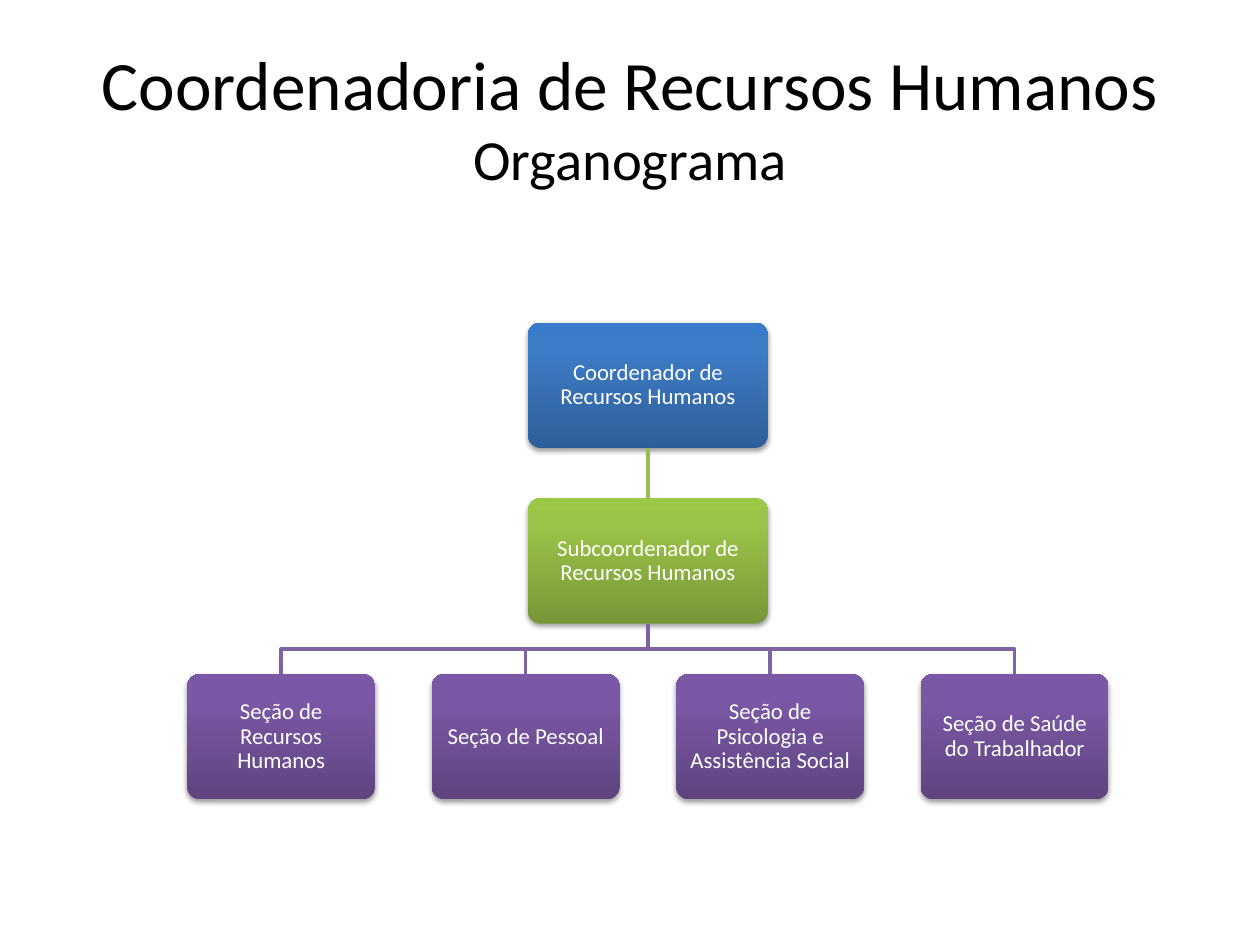
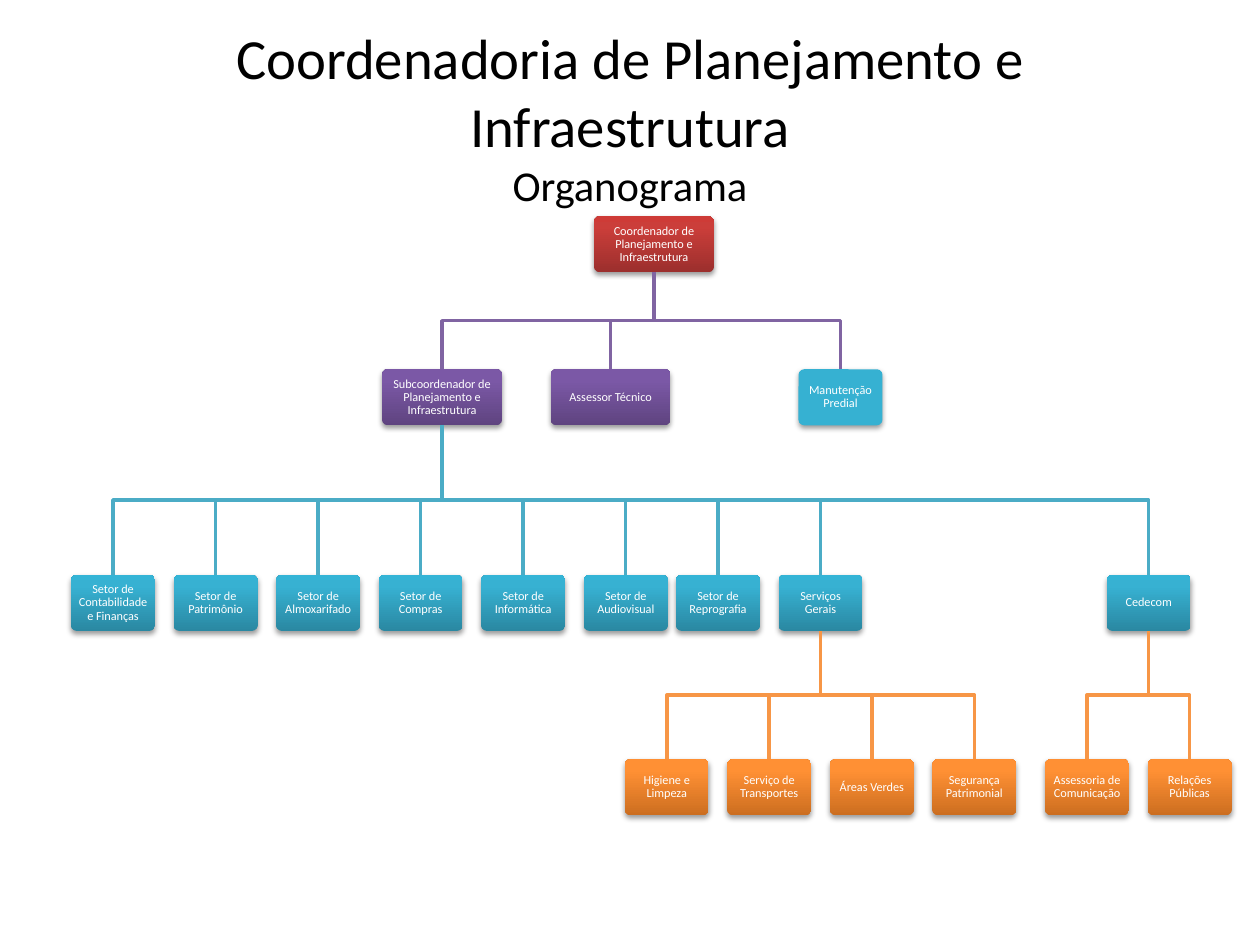
from copy import deepcopy

from lxml import etree
from pptx import Presentation
from pptx.dml.color import RGBColor
from pptx.enum.shapes import MSO_CONNECTOR, MSO_SHAPE
from pptx.enum.text import MSO_ANCHOR, MSO_AUTO_SIZE, PP_ALIGN
from pptx.oxml.ns import qn
from pptx.util import Pt

STRAIGHT = MSO_CONNECTOR.STRAIGHT
ROUNDED = MSO_SHAPE.ROUNDED_RECTANGLE
MIDDLE = MSO_ANCHOR.MIDDLE
NO_AUTOFIT = MSO_AUTO_SIZE.NONE
CENTER = PP_ALIGN.CENTER

FONT = "Calibri"
TITLE_ONLY = 5
BLACK = RGBColor(0x00, 0x00, 0x00)
WHITE = RGBColor(0xFF, 0xFF, 0xFF)
FLAT_AQUA = RGBColor(0x36, 0xB1, 0xD2)

# Box gradients, from the bottom edge (dark) to the top edge (light)
STOP_POSITIONS = (0, 0.8, 1)
BLUE = (RGBColor(0x2F, 0x5F, 0x99), RGBColor(0x3D, 0x7C, 0xC7), RGBColor(0x3A, 0x7C, 0xCB))
GREEN = (RGBColor(0x77, 0x97, 0x37), RGBColor(0x9B, 0xC3, 0x48), RGBColor(0x9D, 0xC7, 0x46))
PURPLE = (RGBColor(0x5F, 0x44, 0x80), RGBColor(0x7B, 0x58, 0xA6), RGBColor(0x7C, 0x57, 0xA8))
RED = (RGBColor(0x9C, 0x2F, 0x2D), RGBColor(0xCB, 0x3E, 0x3A), RGBColor(0xCE, 0x3B, 0x37))
AQUA = (RGBColor(0x2A, 0x88, 0xA2), RGBColor(0x37, 0xB1, 0xD2), RGBColor(0x34, 0xB4, 0xD6))
ORANGE = (RGBColor(0xCC, 0x6E, 0x20), RGBColor(0xFF, 0x90, 0x34), RGBColor(0xFF, 0x91, 0x36))

GREEN_LINE = RGBColor(0x9B, 0xBB, 0x59)
PURPLE_LINE = RGBColor(0x80, 0x64, 0xA2)
AQUA_LINE = RGBColor(0x4B, 0xAC, 0xC6)
ORANGE_LINE = RGBColor(0xF7, 0x96, 0x46)


def write(paragraph, text, size=13, color=WHITE):
    """Add a formatted run to a centred paragraph."""
    paragraph.alignment = CENTER
    run = paragraph.add_run()
    run.text = text
    run.font.name = FONT
    run.font.size = Pt(size)
    run.font.color.rgb = color
    return run


def spread(middle, count, step):
    """Return equally spaced centres around a middle."""
    return [middle + (i - (count - 1) / 2) * step for i in range(count)]


class OrgChart:
    """Holds the box style and the slide being drawn."""

    def __init__(self, prs, box_height, text_size, inset):
        self.slide = prs.slides.add_slide(prs.slide_layouts[TITLE_ONLY])
        self.box_height = box_height
        self.text_size = text_size
        self.inset = Pt(inset)

    def title(self, heading, heading_size, subtitle, subtitle_size):
        holder = self.slide.shapes.title
        holder.left, holder.top, holder.width, holder.height = Pt(36), Pt(21.6), Pt(648), Pt(90)
        frame = holder.text_frame
        frame.auto_size = NO_AUTOFIT
        frame.vertical_anchor = MIDDLE
        paragraph = frame.paragraphs[0]
        run = write(paragraph, heading, size=heading_size, color=BLACK)
        # The break takes the heading's size so it does not stretch the line
        paragraph.add_line_break()
        paragraph._p[-1].append(deepcopy(run._r.rPr))
        write(paragraph, subtitle, size=subtitle_size, color=BLACK)

    def box(self, text, center, top, width, colors):
        box = self.slide.shapes.add_shape(
            ROUNDED, Pt(center - width / 2), Pt(top), Pt(width), Pt(self.box_height))
        box.adjustments[0] = 0.1
        self.paint(box, colors)
        box.line.fill.background()
        self.cast_shadow(box)
        frame = box.text_frame
        frame.word_wrap = True
        frame.vertical_anchor = MIDDLE
        frame.margin_left = frame.margin_right = self.inset
        frame.margin_top = frame.margin_bottom = self.inset
        frame.paragraphs[0].line_spacing = 0.9
        write(frame.paragraphs[0], text, size=self.text_size)
        return box

    def paint(self, box, colors):
        if isinstance(colors, RGBColor):
            box.fill.solid()
            box.fill.fore_color.rgb = colors
            return
        box.fill.gradient()
        box.fill.gradient_angle = 90
        stops = box._element.spPr.find(".//" + qn("a:gsLst"))
        stops.append(deepcopy(stops[0]))
        for stop, position, color in zip(box.fill.gradient_stops, STOP_POSITIONS, colors):
            stop.position = position
            stop.color.rgb = color

    def cast_shadow(self, box):
        box.shadow.inherit = False
        effects = box._element.spPr.find(qn("a:effectLst"))
        shadow = etree.SubElement(
            effects, qn("a:outerShdw"), blurRad=str(Pt(3.1)), dist=str(Pt(1.6)),
            dir="5400000", rotWithShape="0")
        tone = etree.SubElement(shadow, qn("a:srgbClr"), val=str(BLACK))
        etree.SubElement(tone, qn("a:alpha"), val="38000")

    def link(self, parent, child, color):
        """Join two boxes, bending halfway down when they are not aligned."""
        start_x, end_x = (b.left + b.width // 2 for b in (parent, child))
        start_y, end_y = parent.top + parent.height, child.top
        if abs(start_x - end_x) < Pt(0.1):
            line = self.slide.shapes.add_connector(STRAIGHT, start_x, start_y, end_x, end_y)
            etree.SubElement(line._element.spPr, qn("a:effectLst"))
        else:
            bend = (start_y + end_y) // 2
            outline = self.slide.shapes.build_freeform(start_x, start_y)
            outline.add_line_segments(
                [(start_x, bend), (end_x, bend), (end_x, end_y)], close=False)
            line = outline.convert_to_shape()
            line.fill.background()
            line.shadow.inherit = False
        line.line.color.rgb = color
        line.line.width = Pt(2)

    def row(self, parent, labels, centers, top, width, colors, line_color):
        """Draw the boxes below a parent and return them."""
        boxes = []
        for label, center in zip(labels, centers):
            boxes.append(self.box(label, center, top, width, colors))
            self.link(parent, boxes[-1], line_color)
        return boxes


def human_resources(prs):
    chart = OrgChart(prs, box_height=71.6, text_size=13, inset=3.6)
    chart.title("Coordenadoria de Recursos Humanos", 39.6, "Organograma", 32.4)
    axis, wide = 370.2, 137
    tops = [184.4 + level * 100.4 for level in range(3)]

    coordinator = chart.box("Coordenador de Recursos Humanos", axis, tops[0], wide, BLUE)
    [deputy] = chart.row(coordinator, ["Subcoordenador de Recursos Humanos"], [axis],
                         tops[1], wide, GREEN, GREEN_LINE)
    sections = ["Seção de Recursos Humanos", "Seção de Pessoal",
                "Seção de Psicologia e Assistência Social", "Seção de Saúde do Trabalhador"]
    chart.row(deputy, sections, spread(axis, len(sections), 139.7),
              tops[2], 107.4, PURPLE, PURPLE_LINE)


def planning(prs):
    chart = OrgChart(prs, box_height=32, text_size=7, inset=2)
    chart.title("Coordenadoria de Planejamento e Infraestrutura", 32.4, "Organograma", 24.3)
    wide, narrow, step = 68.4, 48, 58.6
    head_top, staff_top, sector_top, unit_top = 123.6, 211, 328.5, 433.9

    # Coordinator and direct staff
    coordinator = chart.box("Coordenador de Planejamento e Infraestrutura",
                            373.7, head_top, wide, RED)
    deputy, _ = chart.row(
        coordinator, ["Subcoordenador de Planejamento e Infraestrutura", "Assessor Técnico"],
        [252.6, 348.9], staff_top, wide, PURPLE, PURPLE_LINE)
    chart.row(coordinator, ["Manutenção Predial"], [480.3],
              staff_top, narrow, FLAT_AQUA, PURPLE_LINE)

    # Sectors
    sectors = ["Setor de Contabilidade e Finanças", "Setor de Patrimônio",
               "Setor de Almoxarifado", "Setor de Compras", "Setor de Informática",
               "Setor de Audiovisual", "Setor de Reprografia", "Serviços Gerais", "Cedecom"]
    services_x = 468.9
    centers = [64.6 + i * step for i in range(6)] + [services_x - step, services_x, 656.4]
    *_, services, communication = chart.row(
        deputy, sectors, centers, sector_top, narrow, AQUA, AQUA_LINE)

    # Units below the last two sectors
    for parent, middle, units in (
        (services, services_x, ["Higiene e Limpeza", "Serviço de Transportes",
                                "Áreas Verdes", "Segurança Patrimonial"]),
        (communication, 650.5, ["Assessoria de Comunicação", "Relações Públicas"]),
    ):
        chart.row(parent, units, spread(middle, len(units), step),
                  unit_top, narrow, ORANGE, ORANGE_LINE)


def main():
    prs = Presentation()
    prs.slide_width, prs.slide_height = Pt(720), Pt(540)
    human_resources(prs)
    planning(prs)
    prs.save("out.pptx")


if __name__ == "__main__":
    main()
